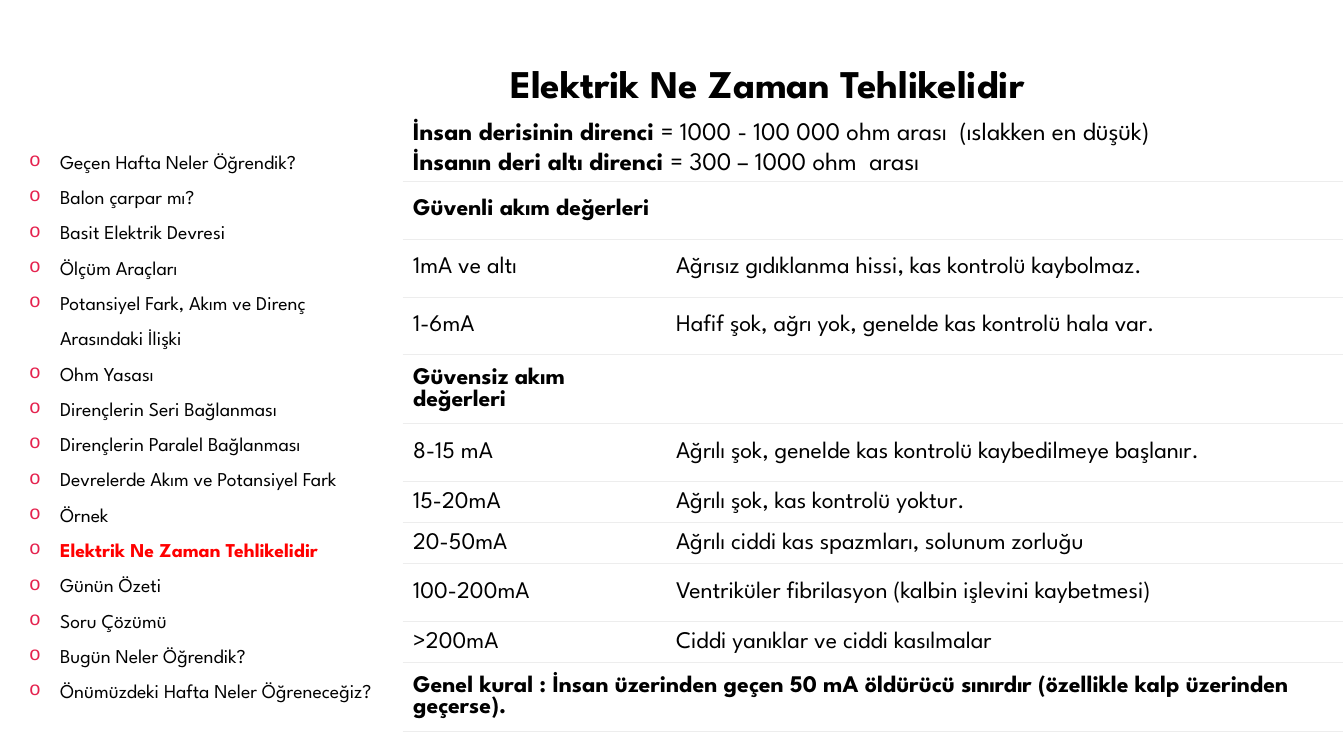
from lxml import etree
from pptx import Presentation
from pptx import util as u
from pptx.dml.color import RGBColor
from pptx.enum import text
from pptx.oxml import ns

TITLE = "Elektrik Ne Zaman Tehlikelidir"
RESISTANCES = [
    ("İnsan derisinin direnci ", "= 1000 - 100 000 ohm arası  (ıslakken en düşük)"),
    ("İnsanın deri altı direnci ", "= 300 – 1000 ohm  arası"),
]
CURRENTS = [
    (58, "Güvenli akım değerleri", ""),
    (58, "1mA ve altı", "Ağrısız gıdıklanma hissi, kas kontrolü kaybolmaz."),
    (58, "1-6mA", "Hafif şok, ağrı yok, genelde kas kontrolü hala var."),
    (69, "Güvensiz akım değerleri", ""),
    (58, "8-15 mA", "Ağrılı şok, genelde kas kontrolü kaybedilmeye başlanır."),
    (41, "15-20mA", "Ağrılı şok, kas kontrolü yoktur."),
    (41, "20-50mA", "Ağrılı ciddi kas spazmları, solunum zorluğu"),
    (58, "100-200mA", "Ventriküler fibrilasyon (kalbin işlevini kaybetmesi)"),
    (41, ">200mA", "Ciddi yanıklar ve ciddi kasılmalar"),
    (69, "Genel kural : İnsan üzerinden geçen 50 mA öldürücü sınırdır "
         "(özellikle kalp üzerinden geçerse).", ""),
]
TOPICS = [
    "Geçen Hafta Neler Öğrendik?",
    "Balon çarpar mı?",
    "Basit Elektrik Devresi",
    "Ölçüm Araçları",
    "Potansiyel Fark, Akım ve Direnç Arasındaki İlişki",
    "Ohm Yasası",
    "Dirençlerin Seri Bağlanması",
    "Dirençlerin Paralel Bağlanması",
    "Devrelerde Akım ve Potansiyel Fark",
    "Örnek",
    TITLE,
    "Günün Özeti",
    "Soru Çözümü",
    "Bugün Neler Öğrendik?",
    "Önümüzdeki Hafta Neler Öğreneceğiz?",
]
COLORS = {"text": "000000", "current": "FF0000", "bullet": "E5224E",
          "border": "EDEDED", "cell": "FFFFFF"}
FONT = "League Spartan"
COLUMNS = [263, 677]
TITLE_BOX = (500, 54, 794, 57)
RESISTANCE_BOX = (403, 110, 909, 71)
TABLE_BOX = (403, 181, sum(COLUMNS), sum(row[0] for row in CURRENTS))
TOPIC_BOX = (19, 133, 384, 611)
FRAME = {"word_wrap": True, "vertical_anchor": text.MSO_ANCHOR.TOP,
         "auto_size": text.MSO_AUTO_SIZE.NONE}
CELL = {"vertical_anchor": text.MSO_ANCHOR.MIDDLE,
        "margin_top": u.Inches(0.06), "margin_bottom": u.Inches(0.06)}


def px(n):
    return round(n * 914400 / 100.8)


def assign(obj, values):
    for name, value in values.items():
        setattr(obj, name, value)


def place(shape, box):
    assign(shape, dict(zip(("left", "top", "width", "height"), map(px, box))))
    assign(shape.text_frame, FRAME)
    return shape.text_frame


def add_run(p, words, size, bold=False, color="text"):
    r = p.add_run()
    r.text = words
    assign(r.font, {"name": FONT, "size": u.Pt(size), "bold": bold})
    r.font.color.rgb = RGBColor.from_string(COLORS[color])


def paragraphs(tf, items):
    for i, item in enumerate(items):
        yield (tf.add_paragraph() if i else tf.paragraphs[0]), item


def add_bullet(p):
    pPr = p._p.get_or_add_pPr()
    pPr.set("marL", str(px(31)))
    pPr.set("indent", str(-px(31)))
    color = etree.SubElement(pPr, ns.qn("a:buClr"))
    etree.SubElement(color, ns.qn("a:srgbClr"), val=COLORS["bullet"])
    etree.SubElement(pPr, ns.qn("a:buFont"), typeface="Courier New")
    etree.SubElement(pPr, ns.qn("a:buChar"), char="o")


def format_cell(cell):
    assign(cell, CELL)
    tcPr = cell._tc.get_or_add_tcPr()
    for side in ("lnL", "lnR", "lnT", "lnB"):
        line = etree.SubElement(tcPr, ns.qn("a:" + side), w=str(u.Pt(0.75)))
        if side in ("lnL", "lnR"):
            etree.SubElement(line, ns.qn("a:noFill"))
        else:
            fill = etree.SubElement(line, ns.qn("a:solidFill"))
            etree.SubElement(fill, ns.qn("a:srgbClr"), val=COLORS["border"])
    cell.fill.solid()
    cell.fill.fore_color.rgb = RGBColor.from_string(COLORS["cell"])


def add_currents(s):
    frame = s.shapes.add_table(len(CURRENTS), len(COLUMNS), *map(px, TABLE_BOX))
    table = frame.table
    assign(table, {"first_row": False, "horz_banding": False})
    for column, width in zip(table.columns, COLUMNS):
        column.width = px(width)
    for row, (height, *words) in zip(table.rows, CURRENTS):
        row.height = px(height)
        for cell, content in zip(row.cells, words):
            format_cell(cell)
            if content:
                add_run(cell.text_frame.paragraphs[0], content, 17, bold=not words[1])
    last = len(CURRENTS) - 1
    table.cell(last, 0).merge(table.cell(last, 1))


def main():
    prs = Presentation()
    assign(prs, {"slide_width": px(1344), "slide_height": px(756)})
    s = prs.slides.add_slide(prs.slide_layouts[1])

    p = place(s.shapes.title, TITLE_BOX).paragraphs[0]
    p.alignment = text.PP_ALIGN.LEFT
    add_run(p, TITLE, 28, bold=True)

    add_currents(s)

    box = s.shapes.add_textbox(*map(px, RESISTANCE_BOX))
    for p, (label, value) in paragraphs(place(box, RESISTANCE_BOX), RESISTANCES):
        add_run(p, label, 18, bold=True)
        add_run(p, value, 18)

    for p, topic in paragraphs(place(s.placeholders[1], TOPIC_BOX), TOPICS):
        assign(p, {"line_spacing": 1.5, "space_before": u.Pt(0)})
        add_bullet(p)
        current = topic == TITLE
        add_run(p, topic, 14, current, "current" if current else "text")

    prs.save("out.pptx")


if __name__ == "__main__":
    main()
